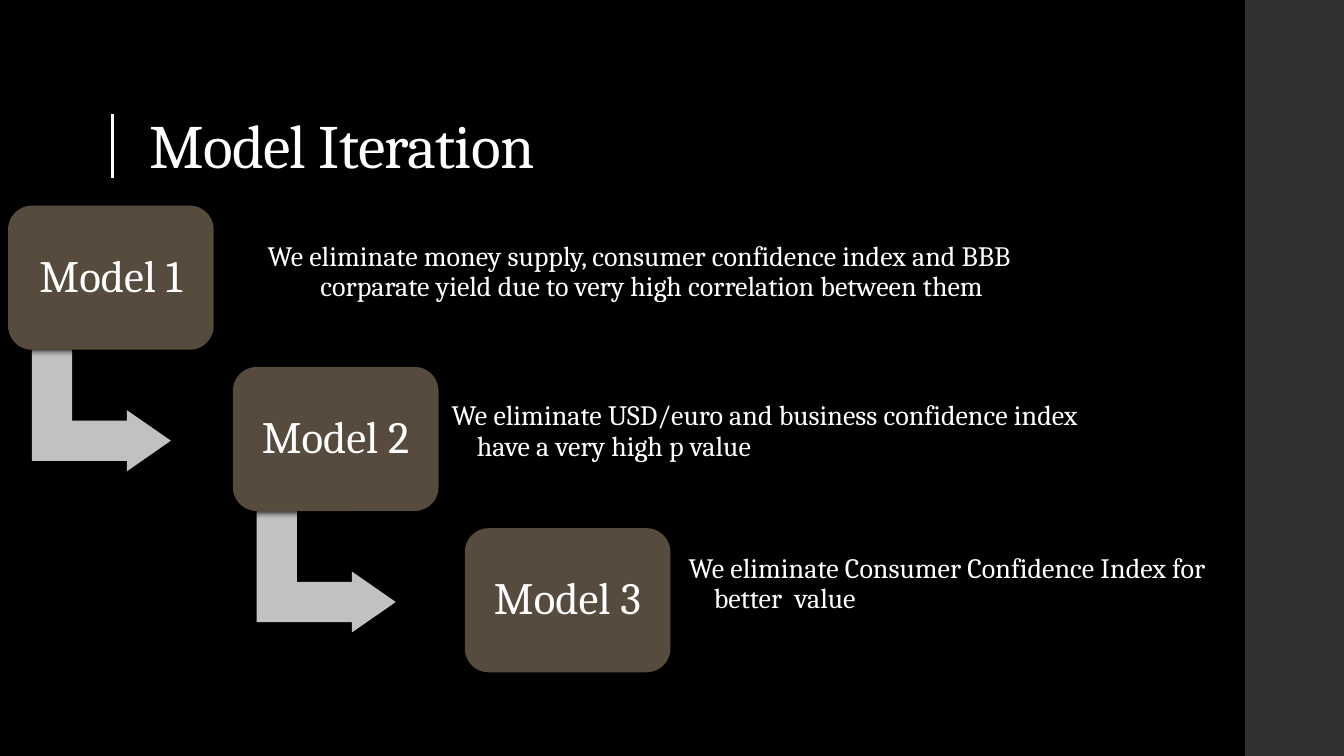
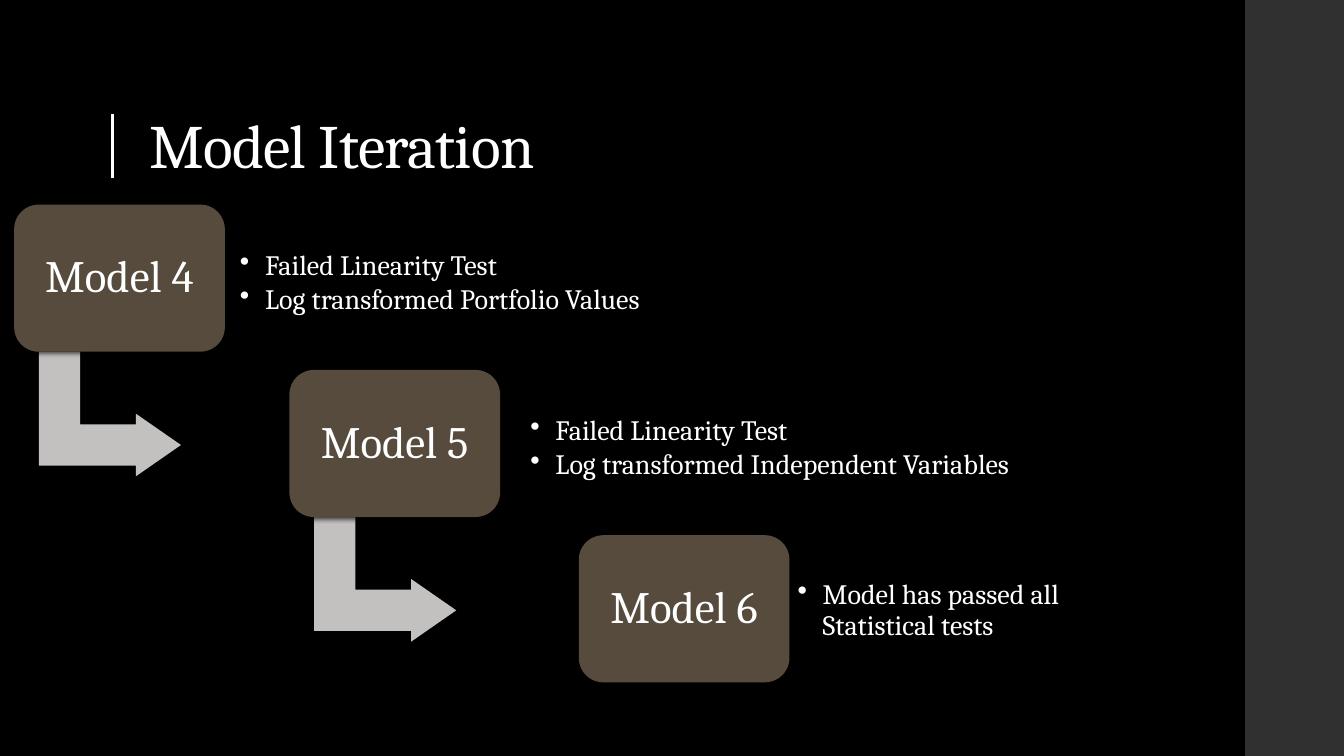
import pptx
import pptx.util
import pptx.dml.color
import pptx.enum.shapes
import pptx.enum.text
import pptx.oxml
import pptx.oxml.ns

Inches, Pt = pptx.util.Inches, pptx.util.Pt
RGBColor = pptx.dml.color.RGBColor
SHAPE = pptx.enum.shapes.MSO_SHAPE
ALIGN = pptx.enum.text.PP_ALIGN
ANCHOR = pptx.enum.text.MSO_ANCHOR

BLACK = RGBColor(0x00, 0x00, 0x00)
WHITE = RGBColor(0xFF, 0xFF, 0xFF)
BAND_GREY = RGBColor(0x30, 0x30, 0x30)
CARD_BROWN = RGBColor(0x56, 0x4B, 0x3C)
ARROW_GREY = RGBColor(0xC3, 0xC1, 0xC0)
FONT = "Cambria"

SHADOW = (
    '<a:effectLst xmlns:a="http://schemas.openxmlformats.org/drawingml/2006/main">'
    '<a:outerShdw blurRad="50800" dist="15240" dir="5400000" rotWithShape="0">'
    '<a:srgbClr val="000000"><a:alpha val="75000"/></a:srgbClr>'
    "</a:outerShdw></a:effectLst>"
)

# Each step: card label, card left, note box (left, top, width), alignment, note lines
SLIDES = [
    {
        "card": (2.04, 1.43), "top": 2.04, "pitch": 1.6,
        "arrow": (0.32, 1.34, 1.21, 1.38), "note_height": 1.15, "bulleted": False,
        "steps": [
            ("Model 1", 0.08, (2.13, 2.13, 8.42), ALIGN.CENTER,
             ["We eliminate money supply, consumer confidence index and BBB "
              "corparate yield due to very high correlation between them"]),
            ("Model 2", 2.31, (4.4, 3.71, 6.69), ALIGN.LEFT,
             ["We eliminate USD/euro and business confidence index have a very high p value"]),
            ("Model 3", 4.61, (6.75, 5.22, 5.88), ALIGN.LEFT,
             ["We eliminate Consumer Confidence Index for better  value"]),
        ],
    },
    {
        "card": (2.09, 1.46), "top": 2.03, "pitch": 1.64,
        "arrow": (0.33, 1.37, 1.24, 1.41), "note_height": 1.18, "bulleted": True,
        "steps": [
            ("Model 4", 0.14, (2.3, 2.22, 5.97), ALIGN.LEFT,
             ["Failed Linearity Test", "Log transformed Portfolio Values"]),
            ("Model 5", 2.87, (5.18, 3.86, 5.66), ALIGN.LEFT,
             ["Failed Linearity Test", "Log transformed Independent Variables"]),
            ("Model 6", 5.74, (7.83, 5.47, 3.91), ALIGN.LEFT,
             ["Model has passed all Statistical tests"]),
        ],
    },
]


def add_solid(slide, preset, left, top, width, height, color, shadow=False):
    """Add a filled shape without outline, with a soft shadow on request."""
    solid = slide.shapes.add_shape(
        preset, Inches(left), Inches(top), Inches(width), Inches(height))
    solid.fill.solid()
    solid.fill.fore_color.rgb = color
    solid.line.fill.background()
    solid.shadow.inherit = False
    if shadow:
        properties = solid.fill._xPr
        properties.remove(properties.find(pptx.oxml.ns.qn("a:effectLst")))
        properties.append(pptx.oxml.parse_xml(SHADOW))
    return solid


def style_text(frame, size, align, anchor, margin, space_after=0):
    frame.word_wrap = True
    frame.auto_size = pptx.enum.text.MSO_AUTO_SIZE.NONE
    frame.vertical_anchor = anchor
    frame.margin_left = frame.margin_right = Inches(margin)
    frame.margin_top = frame.margin_bottom = Inches(margin)
    for paragraph in frame.paragraphs:
        paragraph.alignment = align
        paragraph.line_spacing = 0.9
        paragraph.space_before = Pt(0)
        paragraph.space_after = Pt(space_after)
        for run in paragraph.runs:
            run.font.name = FONT
            run.font.size = Pt(size)
            run.font.color.rgb = WHITE


prs = pptx.Presentation()
prs.slide_width = Inches(13.33)
prs.slide_height = Inches(7.5)
background = prs.slide_master.background.fill
background.solid()
background.fore_color.rgb = BLACK
title_only = prs.slide_layouts[5]

for content in SLIDES:
    slide = prs.slides.add_slide(title_only)
    add_solid(slide, SHAPE.RECTANGLE, 12.35, 0, 0.98, 7.5, BAND_GREY)

    title = slide.shapes.title
    title.left, title.top = Inches(1.38), Inches(0.4)
    title.width, title.height = Inches(10.6), Inches(1.45)
    title.text_frame.text = "Model Iteration"
    style_text(title.text_frame, 44, ALIGN.LEFT, ANCHOR.BOTTOM, 0.1)
    title.text_frame.margin_top = title.text_frame.margin_bottom = Inches(0.05)
    title.text_frame.paragraphs[0].runs[0].font._element.set("spc", "-50")

    title_bar = add_solid(slide, SHAPE.RECTANGLE, 1.09, 1.12, 0.05, 0.65, WHITE)
    title_bar.line.color.rgb = BLACK
    title_bar.line.width = Pt(1.1)

    card_width, card_height = content["card"]
    arrow_dx, arrow_dy, arrow_width, arrow_height = content["arrow"]
    last = len(content["steps"]) - 1
    for index, (label, left, note_box, align, lines) in enumerate(content["steps"]):
        top = content["top"] + index * content["pitch"]

        if index < last:
            arrow = add_solid(slide, SHAPE.BENT_UP_ARROW, left + arrow_dx, top + arrow_dy,
                              arrow_width, arrow_height, ARROW_GREY, shadow=True)
            arrow.rotation = 90
            for position, value in enumerate((0.33, 0.25, 0.36)):
                arrow.adjustments[position] = value

        card = add_solid(slide, SHAPE.ROUNDED_RECTANGLE, left, top,
                         card_width, card_height, CARD_BROWN, shadow=True)
        card.text_frame.text = label
        style_text(card.text_frame, 32, ALIGN.CENTER, ANCHOR.MIDDLE, 0.13)

        note_left, note_top, note_width = note_box
        note = slide.shapes.add_textbox(Inches(note_left), Inches(note_top),
                                        Inches(note_width), Inches(content["note_height"]))
        note.text_frame.text = "\n".join(lines)
        style_text(note.text_frame, 20, align, ANCHOR.MIDDLE, 0.08, space_after=3)
        for paragraph in note.text_frame.paragraphs:
            properties = paragraph._p.get_or_add_pPr()
            properties.set("marL", str(Inches(0.25)))
            properties.set("indent", str(Inches(-0.25)))
            if content["bulleted"]:
                bullet = properties.makeelement(pptx.oxml.ns.qn("a:buChar"), {"char": "•"})
                properties.append(bullet)

prs.save("out.pptx")
